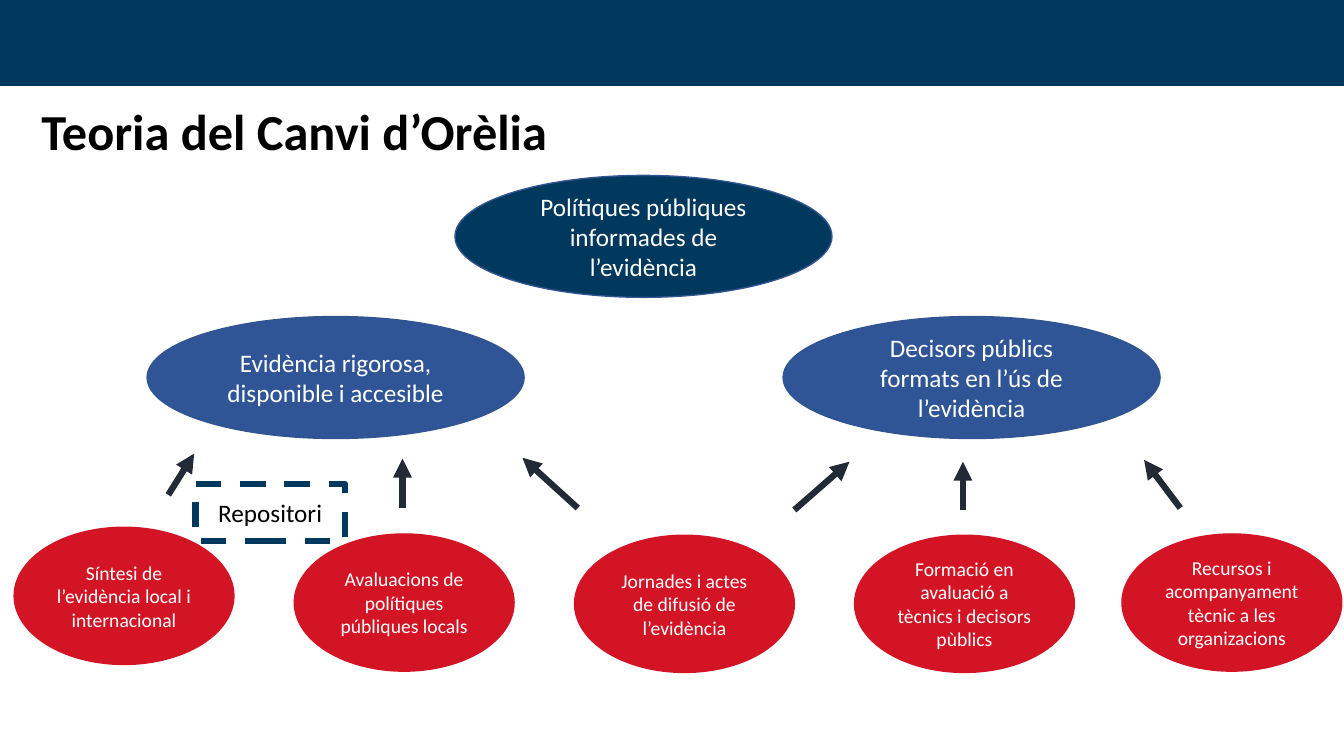
"""Build the theory of change slide."""
from typing import NamedTuple, Optional

from lxml.etree import SubElement
from pptx import Presentation
from pptx.dml.color import RGBColor
from pptx.enum.dml import MSO_LINE
from pptx.enum.shapes import MSO_CONNECTOR, MSO_SHAPE
from pptx.enum.text import MSO_ANCHOR, MSO_AUTO_SIZE, PP_ALIGN
from pptx.oxml.ns import qn
from pptx.shapes.autoshape import Shape
from pptx.slide import Slide
from pptx.text.text import TextFrame
from pptx.util import Pt

NAVY = RGBColor(0x00, 0x39, 0x5D)
BLUE = RGBColor(0x2F, 0x55, 0x97)
OUTLINE = RGBColor(0x32, 0x54, 0x91)
RED = RGBColor(0xD2, 0x14, 0x25)
SLATE = RGBColor(0x22, 0x2A, 0x35)
WHITE = RGBColor(0xFF, 0xFF, 0xFF)
BLACK = RGBColor(0x00, 0x00, 0x00)


class Level(NamedTuple):
    width: float
    height: float
    size: float
    fill: RGBColor
    line: RGBColor


class Goal(NamedTuple):
    text: str
    left: float
    top: float
    level: Level


class Arrow(NamedTuple):
    start_x: float
    start_y: float
    end_x: float
    end_y: float


IMPACT = Level(269.3, 87.1, 18, NAVY, OUTLINE)
OUTCOME = IMPACT._replace(fill=BLUE)
ACTIVITY = Level(157, 98, 14, RED, RED)

GOALS = [
    Goal("Polítiques públiques informades de l’evidència", 325, 125.3, IMPACT),
    Goal("Decisors públics formats en l’ús de l’evidència", 559.4, 226.1, OUTCOME),
    Goal("Evidència rigorosa, disponible i accesible", 105.1, 226.1, OUTCOME),
    Goal("Síntesi de l’evidència local i internacional", 10.1, 376.6, ACTIVITY),
    Goal("Avaluacions de polítiques públiques locals", 210.2, 381.4, ACTIVITY),
    Goal("Jornades i actes de difusió de l’evidència", 410.4, 382.3, ACTIVITY),
    Goal("Formació en avaluació a tècnics i decisors pùblics", 610.4, 382.3, ACTIVITY),
    Goal("Recursos i acompanyament tècnic a les organizacions", 801.4, 381.4, ACTIVITY),
]
ARROWS = [
    Arrow(120.2, 353.5, 138.7, 324),
    Arrow(287.5, 362.9, 287.5, 327.6),
    Arrow(412.7, 362.9, 373.2, 327),
    Arrow(567.4, 364.3, 606.8, 329.8),
    Arrow(687.8, 364.3, 687.8, 329.8),
    Arrow(843.1, 362.9, 817.2, 328.5),
]


def write(frame: TextFrame, text: str, size: float, color: RGBColor,
          align: PP_ALIGN = PP_ALIGN.CENTER, bold: bool = False) -> None:
    """Put one formatted paragraph in a text frame."""
    frame.text = text
    frame.word_wrap = True
    para = frame.paragraphs[0]
    para.alignment = align
    font = para.runs[0].font
    font.name, font.size, font.bold = "Calibri", Pt(size), bold
    font.color.rgb = color


def add_box(page: Slide, kind: MSO_SHAPE, left: float, top: float, width: float,
            height: float, fill: Optional[RGBColor], line: RGBColor,
            weight: float = 1) -> Shape:
    """Add a flat shape, unfilled when no fill is given."""
    box = page.shapes.add_shape(kind, Pt(left), Pt(top), Pt(width), Pt(height))
    box.shadow.inherit = False
    if fill is None:
        box.fill.background()
    else:
        box.fill.solid()
        box.fill.fore_color.rgb = fill
    box.line.color.rgb = line
    box.line.width = Pt(weight)
    box.text_frame.vertical_anchor = MSO_ANCHOR.MIDDLE
    return box


def add_goal(page: Slide, goal: Goal) -> None:
    """Add one ellipse of the theory of change."""
    level = goal.level
    box = add_box(page, MSO_SHAPE.OVAL, goal.left, goal.top, level.width,
                  level.height, level.fill, level.line)
    write(box.text_frame, goal.text, level.size, WHITE)


def add_arrow(page: Slide, arrow: Arrow) -> None:
    """Add a thick straight arrow."""
    link = page.shapes.add_connector(MSO_CONNECTOR.STRAIGHT, *map(Pt, arrow))
    link.line.color.rgb = SLATE
    link.line.width = Pt(4.5)
    SubElement(link.line._get_or_add_ln(), qn("a:tailEnd"), type="triangle")
    SubElement(link._element.spPr, qn("a:effectLst"))


def add_title(page: Slide, text: str) -> None:
    """Place and format the title placeholder."""
    title = page.shapes.title
    title.left, title.top, title.width, title.height = map(Pt, (-7.2, 67.7, 552.2, 79.9))
    frame = title.text_frame
    frame.auto_size = MSO_AUTO_SIZE.NONE
    frame.vertical_anchor = MSO_ANCHOR.TOP
    frame.margin_left = Pt(36.7)
    write(frame, text, 36, BLACK, PP_ALIGN.LEFT, True)


def main() -> None:
    """Build and save the deck."""
    deck = Presentation()
    deck.slide_width, deck.slide_height = Pt(960), Pt(540)
    page = deck.slides.add_slide(deck.slide_layouts[5])
    add_title(page, "Teoria del Canvi d’Orèlia")
    add_box(page, MSO_SHAPE.RECTANGLE, 0, 0, 960, 61.2, NAVY, NAVY)
    for goal in GOALS:
        add_goal(page, goal)
    for arrow in ARROWS:
        add_arrow(page, arrow)
    repository = add_box(page, MSO_SHAPE.RECTANGLE, 139.7, 345.6, 106.6, 41,
                         None, NAVY, 4.5)
    repository.line.dash_style = MSO_LINE.DASH
    write(repository.text_frame, "Repositori", 18, BLACK)
    deck.save("out.pptx")


if __name__ == "__main__":
    main()
